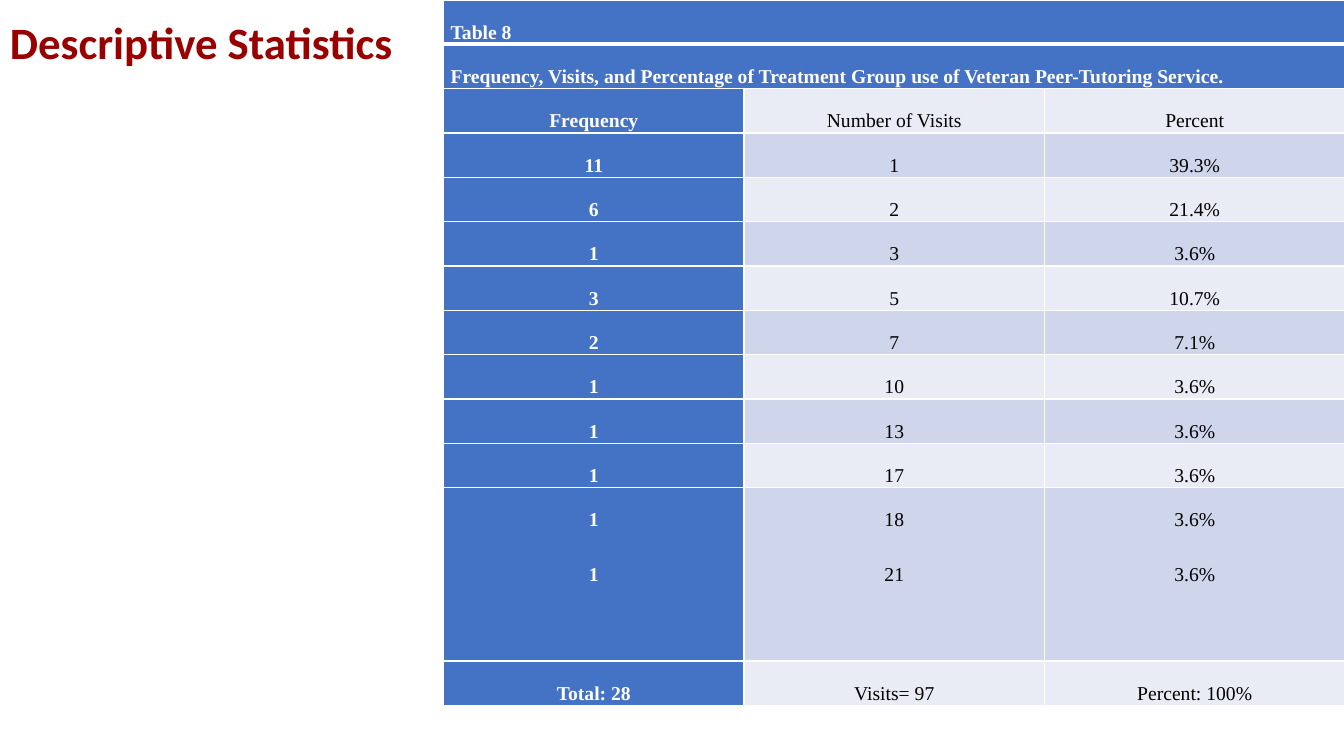
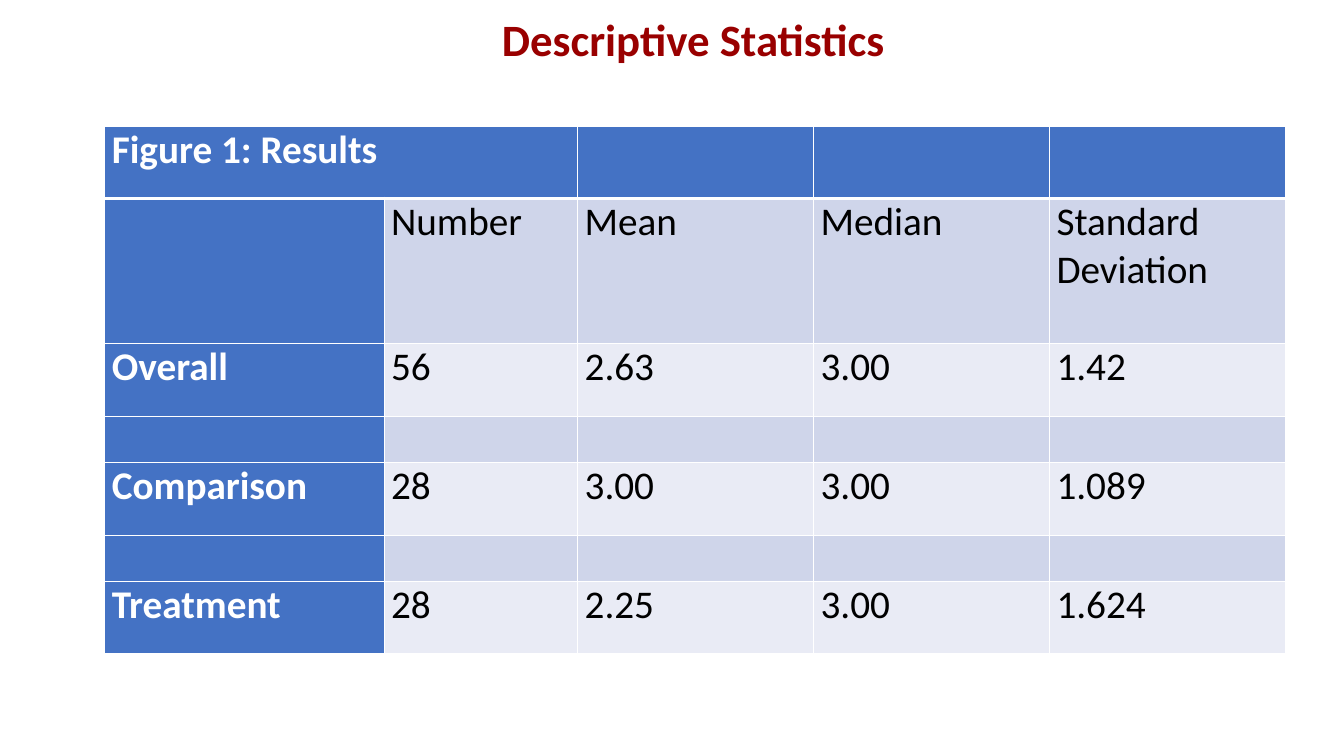
from lxml import etree
from pptx import Presentation
from pptx.dml.color import RGBColor
from pptx.enum.text import MSO_AUTO_SIZE, PP_ALIGN
from pptx.oxml.ns import qn
from pptx.util import Inches, Pt

LEFT, CENTER = PP_ALIGN.LEFT, PP_ALIGN.CENTER
FIT_TEXT = MSO_AUTO_SIZE.SHAPE_TO_FIT_TEXT
TITLE_RED = RGBColor(0x99, 0x00, 0x00)
HEADER_BLUE = RGBColor(0x44, 0x72, 0xC4)
DARK_BAND = RGBColor(0xCF, 0xD5, 0xEA)
LIGHT_BAND = RGBColor(0xE9, 0xEB, 0xF5)
WHITE = RGBColor(0xFF, 0xFF, 0xFF)
BLACK = RGBColor(0x00, 0x00, 0x00)

TITLE = "Descriptive Statistics"
VISITS = {
    "title_at": (0, 0.1),
    "table_at": (4.4, 0),
    "columns": [2.98] * 3,
    "row_heights": [0.44] * 11 + [1.72, 0.44],
    "header_rows": 2,
    "merged": [(0, 2), (1, 2)],
    "body_align": CENTER,
    "text": {"font": "Times New Roman", "size": 14, "line_spacing": 2.0, "space_after": 8},
    "rows": [
        ("Table 8", "", ""),
        ("Frequency, Visits, and Percentage of Treatment Group use of Veteran Peer-Tutoring Service.", "", ""),
        ("Frequency", "Number of Visits", "Percent"),
        ("11", "1", "39.3%"),
        ("6", "2", "21.4%"),
        ("1", "3", "3.6%"),
        ("3", "5", "10.7%"),
        ("2", "7", "7.1%"),
        ("1", "10", "3.6%"),
        ("1", "13", "3.6%"),
        ("1", "17", "3.6%"),
        ("1\n1", "18\n21", "3.6%\n3.6%"),
        ("Total: 28", "Visits= 97", "Percent: 100%"),
    ],
}
RESULTS = {
    "title_at": (4.88, 0.07),
    "table_at": (1.04, 1.25),
    "columns": [2.77, 1.92] + [2.34] * 3,
    "row_heights": [0.72, 1.44, 0.72, 0.46, 0.72, 0.46, 0.72],
    "header_rows": 1,
    "merged": [(0, 1)],
    "body_align": LEFT,
    "text": {"font": "Calibri", "size": 28},
    "rows": [
        ("Figure 1: Results", "", "", "", ""),
        ("", "Number", "Mean", "Median", "Standard Deviation"),
        ("Overall", "56", "2.63", "3.00", "1.42"),
        ("", "", "", "", ""),
        ("Comparison", "28", "3.00", "3.00", "1.089"),
        ("", "", "", "", ""),
        ("Treatment", "28", "2.25", "3.00", "1.624"),
    ],
}


def write_text(frame, text, *, font, size, color, bold=False, align=LEFT,
               line_spacing=None, space_after=0):
    for index, line in enumerate(text.split("\n")):
        paragraph = frame.add_paragraph() if index else frame.paragraphs[0]
        paragraph.alignment = align
        paragraph.line_spacing = line_spacing
        paragraph.space_after = Pt(space_after)
        run = paragraph.add_run()
        run.text = line
        run.font.name = font
        run.font.size = Pt(size)
        run.font.bold = bold
        run.font.color.rgb = color


def add_title(slide, left, top):
    box = slide.shapes.add_textbox(Inches(left), Inches(top), Inches(4.04), Inches(1.18))
    box.text_frame.word_wrap = False
    box.text_frame.auto_size = FIT_TEXT
    write_text(box.text_frame, TITLE, font="Calibri", size=32, color=TITLE_RED, bold=True)


def set_borders(cell, top, bottom):
    properties = cell._tc.get_or_add_tcPr()
    for side, width in (("L", 1), ("R", 1), ("T", top), ("B", bottom)):
        line = etree.SubElement(properties, qn(f"a:ln{side}"), w=str(Pt(width)))
        fill = etree.SubElement(line, qn("a:solidFill"))
        etree.SubElement(fill, qn("a:srgbClr"), val=str(WHITE))


def format_cell(cell, row, column, content):
    is_header = row < content["header_rows"]
    is_blue = is_header or column == 0
    set_borders(cell, 3 if row == 1 else 1, 3 if row == 0 else 1)
    cell.fill.solid()
    band = DARK_BAND if row % 2 else LIGHT_BAND
    cell.fill.fore_color.rgb = HEADER_BLUE if is_blue else band
    cell.margin_left = cell.margin_right = Inches(0.07)
    cell.margin_top = cell.margin_bottom = 0
    text = content["rows"][row][column]
    if text:
        write_text(cell.text_frame, text, color=WHITE if is_blue else BLACK, bold=is_blue,
                   align=LEFT if is_header else content["body_align"], **content["text"])


def add_data_table(slide, content):
    columns, heights = content["columns"], content["row_heights"]
    left, top = content["table_at"]
    table = slide.shapes.add_table(
        len(heights), len(columns), Inches(left), Inches(top),
        Inches(sum(columns)), Inches(sum(heights))).table
    table.first_col = True
    for column, width in enumerate(columns):
        table.columns[column].width = Inches(width)
    for row, height in enumerate(heights):
        table.rows[row].height = Inches(height)
        for column in range(len(columns)):
            format_cell(table.cell(row, column), row, column, content)
    for row, last_column in content["merged"]:
        table.cell(row, 0).merge(table.cell(row, last_column))


def main():
    presentation = Presentation()
    presentation.slide_width = Inches(13.33)
    presentation.slide_height = Inches(7.5)
    for content in (VISITS, RESULTS):
        slide = presentation.slides.add_slide(presentation.slide_layouts[6])
        add_data_table(slide, content)
        add_title(slide, *content["title_at"])
    presentation.save("out.pptx")


if __name__ == "__main__":
    main()
